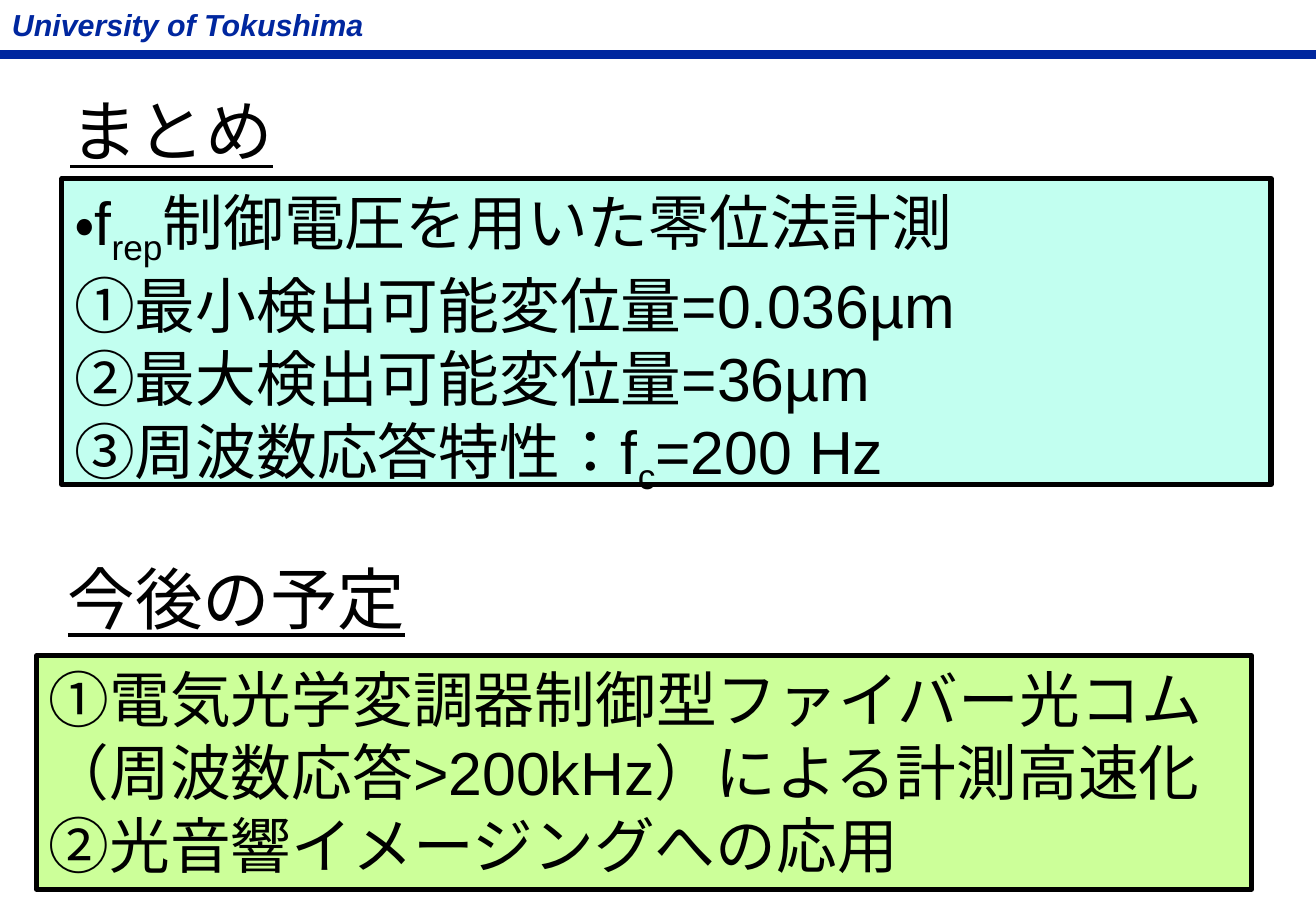
from dataclasses import dataclass
from pptx import Presentation
from pptx.dml.color import RGBColor
from pptx.enum.lang import MSO_LANGUAGE_ID
from pptx.enum.shapes import MSO_SHAPE
from pptx.enum.text import MSO_ANCHOR, MSO_AUTO_SIZE, PP_ALIGN
from pptx.oxml.ns import qn
from pptx.util import Inches, Pt


@dataclass(frozen=True)
class Theme:
    font: str = "Arial"
    ink: str = "000000"
    navy: str = "00279F"
    mint: str = "C2FFF0"
    lime: str = "CCFF99"
    brand_pt: int = 18
    heading_pt: int = 40
    body_pt: int = 36
    border_pt: int = 3


T = Theme()
WIDTH, HEIGHT = 10.83, 7.5

SUMMARY = [
    ["・f", ("rep",), "制御電圧を用いた零位法計測"],
    ["①最小検出可能変位量=0.036µm"],
    ["②最大検出可能変位量=36µm"],
    ["③周波数応答特性：f", ("c",), "=200 Hz"],
]
PLANS = [
    ["①電気光学変調器制御型ファイバー光コム（周波数応答>200kHz）による計測高速化"],
    ["②光音響イメージングへの応用"],
]


def place(sp, box):
    for name, value in zip(("left", "top", "width", "height"), box):
        setattr(sp, name, Inches(value))


def paint(sp, fill, line, width):
    sp.fill.solid()
    sp.fill.fore_color.rgb = RGBColor.from_string(fill)
    sp.line.color.rgb = RGBColor.from_string(line)
    sp.line.width = Pt(width)


def write(sp, lines, color, wrap=True, **style):
    tf = sp.text_frame
    frame = dict(word_wrap=wrap, auto_size=MSO_AUTO_SIZE.NONE, vertical_anchor=MSO_ANCHOR.TOP)
    for name, value in frame.items():
        setattr(tf, name, value)
    style = dict(name=T.font, language_id=MSO_LANGUAGE_ID.JAPANESE) | style
    for i, line in enumerate(lines):
        p = tf.paragraphs[0] if i == 0 else tf.add_paragraph()
        spacing = dict(alignment=PP_ALIGN.LEFT, line_spacing=1.0, space_before=Pt(0), space_after=Pt(0))
        for name, value in spacing.items():
            setattr(p, name, value)
        pPr = p._p.get_or_add_pPr()
        pPr.set("marL", "0")
        pPr.set("indent", "0")
        pPr.append(pPr.makeelement(qn("a:buNone"), {}))
        for part in line:
            r = p.add_run()
            r.text = part if isinstance(part, str) else part[0]
            for name, value in style.items():
                setattr(r.font, name, value)
            r.font.color.rgb = RGBColor.from_string(color)
            if not isinstance(part, str):
                r.font._element.set("baseline", "-25000")


def add_header(s, box):
    left, top, width, height = box
    band = s.shapes.add_shape(MSO_SHAPE.RECTANGLE, 0, 0, 0, 0)
    place(band, (left, top + height * 0.87, width, height * 0.13))
    band.shadow.inherit = False
    paint(band, T.navy, T.navy, 1)
    sp = s.shapes.add_textbox(0, 0, 0, 0)
    place(sp, (left, top, 3.18, height * 0.83))
    write(sp, [["University of Tokushima"]], T.navy, wrap=False,
          size=Pt(T.brand_pt), bold=True, italic=True)


def add_section(heading, panel, title, lines, fill, heading_box, panel_box):
    place(heading, heading_box)
    write(heading, [[title]], T.ink, size=Pt(T.heading_pt), underline=True)
    place(panel, panel_box)
    paint(panel, fill, T.ink, T.border_pt)
    write(panel, lines, T.ink, size=Pt(T.body_pt))


def main():
    prs = Presentation()
    prs.slide_width, prs.slide_height = Inches(WIDTH), Inches(HEIGHT)
    s = prs.slides.add_slide(prs.slide_layouts[3])
    title, summary, plans = s.placeholders
    add_header(s, (0, 0, WIDTH, 0.48))
    add_section(title, summary, "まとめ", SUMMARY, T.mint,
                (0.48, 0.68, 8.16, 0.77), (0.51, 1.47, 9.95, 2.52))
    add_section(s.shapes.add_textbox(0, 0, 0, 0), plans, "今後の予定", PLANS, T.lime,
                (0.46, 4.54, 8.16, 0.77), (0.3, 5.4, 10, 1.92))
    prs.save("out.pptx")


if __name__ == "__main__":
    main()
